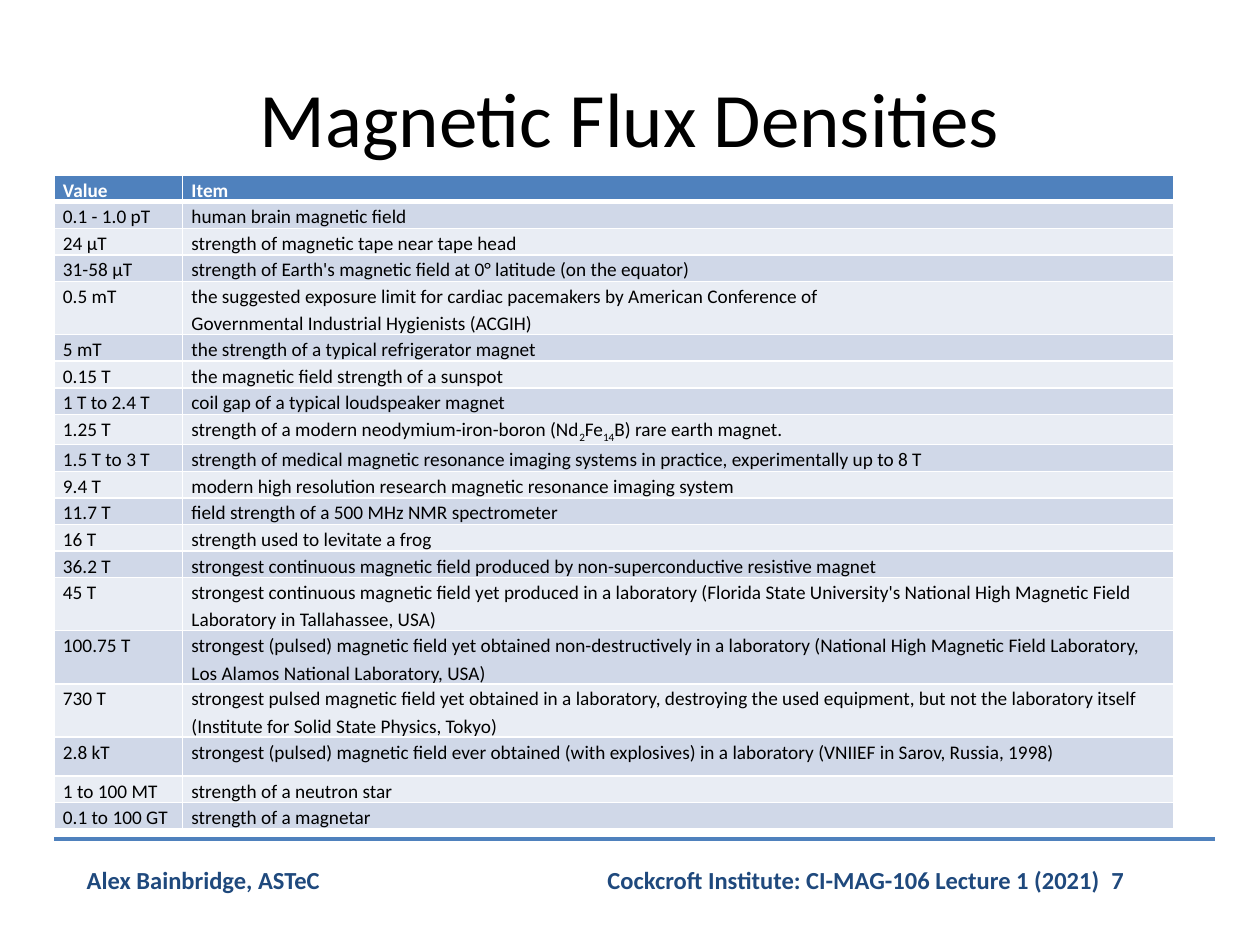
from dataclasses import dataclass

from lxml import etree
from pptx import Presentation, util as u
from pptx.dml.color import RGBColor
from pptx.enum import shapes, text
from pptx.oxml import ns


@dataclass(frozen=True)
class Theme:
    font: str = "Calibri"
    title_size: float = 44
    footer_size: float = 14
    table_size: float = 11
    black: str = "000000"
    white: str = "FFFFFF"
    navy: str = "1F497D"
    accent: str = "4F81BD"
    bands: tuple = ("D0D8E8", "E9EDF4")


THEME = Theme()
HEADER = ("Value", "Item")
# Underscores enclose subscripts; a line break starts a new paragraph.
DENSITIES = [
    ("0.1 - 1.0 pT", "human brain magnetic field"),
    ("24 µT", "strength of magnetic tape near tape head"),
    ("31-58 µT", "strength of Earth's magnetic field at 0° latitude (on the equator)"),
    ("0.5 mT", "the suggested exposure limit for cardiac pacemakers by American Conference of\n"
               "Governmental Industrial Hygienists (ACGIH)"),
    ("5 mT", "the strength of a typical refrigerator magnet"),
    ("0.15 T", "the magnetic field strength of a sunspot"),
    ("1 T to 2.4 T", "coil gap of a typical loudspeaker magnet"),
    ("1.25 T", "strength of a modern neodymium-iron-boron (Nd_2_Fe_14_B) rare earth magnet."),
    ("1.5 T to 3 T", "strength of medical magnetic resonance imaging systems in practice, "
                     "experimentally up to 8 T"),
    ("9.4 T", "modern high resolution research magnetic resonance imaging system"),
    ("11.7 T", "field strength of a 500 MHz NMR spectrometer"),
    ("16 T", "strength used to levitate a frog"),
    ("36.2 T", "strongest continuous magnetic field produced by non-superconductive "
               "resistive magnet"),
    ("45 T", "strongest continuous magnetic field yet produced in a laboratory (Florida State "
             "University's National High Magnetic Field Laboratory in Tallahassee, USA)"),
    ("100.75 T", "strongest (pulsed) magnetic field yet obtained non-destructively in a laboratory "
                 "(National High Magnetic Field Laboratory, Los Alamos National Laboratory, USA)"),
    ("730 T", "strongest pulsed magnetic field yet obtained in a laboratory, destroying the used "
              "equipment, but not the laboratory itself (Institute for Solid State Physics, Tokyo)"),
    ("2.8 kT", "strongest (pulsed) magnetic field ever obtained (with explosives) in a laboratory "
               "(VNIIEF in Sarov, Russia, 1998)"),
    ("1 to 100 MT", "strength of a neutron star"),
    ("0.1 to 100 GT", "strength of a magnetar"),
]
COLUMN_WIDTHS = (1.02, 7.87)
ROW_HEIGHT = 0.2
SPECIAL_HEIGHTS = {0: 0.12, 4: 0.31, 14: 0.31, 15: 0.42, 16: 0.31, 17: 0.31}


def apply_format(target, values):
    for name, value in values.items():
        setattr(target, name, value)


def write_text(frame, wording, size, color, bold=False, paragraph_format=None):
    """Fill a frame, one paragraph per line, with _marked_ parts as subscripts."""
    for index, line in enumerate(wording.split("\n")):
        paragraph = frame.add_paragraph() if index else frame.paragraphs[0]
        apply_format(paragraph, paragraph_format or {})
        for position, part in enumerate(line.split("_")):
            run = paragraph.add_run()
            run.text = part
            apply_format(run.font, {"name": THEME.font, "size": u.Pt(size), "bold": bold})
            run.font.color.rgb = RGBColor.from_string(color)
            if position % 2:
                run.font._element.set("baseline", "-25000")


def add_label(slide, box, wording, size, color, bold=False,
              align=text.PP_ALIGN.LEFT, anchor=text.MSO_ANCHOR.TOP):
    frame = slide.shapes.add_textbox(*map(u.Inches, box)).text_frame
    apply_format(frame, {"word_wrap": True, "vertical_anchor": anchor})
    write_text(frame, wording, size, color, bold, {"alignment": align})


def add_rule(slide, left, right, y):
    rule = slide.shapes.add_connector(
        shapes.MSO_CONNECTOR.STRAIGHT, *map(u.Inches, (left, y, right, y)))
    rule.line.color.rgb = RGBColor.from_string(THEME.accent)
    rule.line.width = u.Pt(2)
    etree.SubElement(rule._element.spPr, ns.qn("a:effectLst"))


def set_borders(cell, widths):
    """Draw white borders; widths maps each side (L, R, T, B) to points."""
    properties = cell._tc.get_or_add_tcPr()
    for side, width in widths.items():
        border = etree.SubElement(properties, ns.qn(f"a:ln{side}"), w=str(u.Pt(width)))
        fill = etree.SubElement(border, ns.qn("a:solidFill"))
        etree.SubElement(fill, ns.qn("a:srgbClr"), val=THEME.white)


def format_cell(cell, wording, row):
    is_header = row == 0
    apply_format(cell, {
        "margin_left": u.Inches(0.07), "margin_right": u.Inches(0.07),
        "margin_top": 0, "margin_bottom": 0,
    })
    set_borders(cell, {"L": 1, "R": 1, "T": 3 if row == 1 else 1, "B": 3 if is_header else 1})
    fill_color = THEME.accent if is_header else THEME.bands[(row - 1) % 2]
    cell.fill.solid()
    cell.fill.fore_color.rgb = RGBColor.from_string(fill_color)
    write_text(cell.text_frame, wording, THEME.table_size,
               THEME.white if is_header else THEME.black, is_header, {"line_spacing": 1.15})


def add_density_table(slide, left, top):
    records = [HEADER, *DENSITIES]
    heights = [SPECIAL_HEIGHTS.get(row, ROW_HEIGHT) for row in range(len(records))]
    table = slide.shapes.add_table(
        len(records), len(HEADER),
        *map(u.Inches, (left, top, sum(COLUMN_WIDTHS), sum(heights)))).table
    for column, width in zip(table.columns, COLUMN_WIDTHS):
        column.width = u.Inches(width)
    for row, (record, height) in enumerate(zip(records, heights)):
        table.rows[row].height = u.Inches(height)
        for column, wording in enumerate(record):
            format_cell(table.cell(row, column), wording, row)


def main():
    deck = Presentation()
    apply_format(deck, {"slide_width": u.Inches(10), "slide_height": u.Inches(7.5)})
    slide = deck.slides.add_slide(deck.slide_layouts[6])
    add_label(slide, (0.59, 6.82, 3.86, 0.34), "Alex Bainbridge, ASTeC",
              THEME.footer_size, THEME.navy, bold=True)
    add_rule(slide, 0.43, 9.64, 6.66)
    add_label(slide, (4.1, 6.82, 5.54, 0.34),
              "Cockcroft Institute: CI-MAG-106 Lecture 1 (2021)\t7",
              THEME.footer_size, THEME.navy, bold=True, align=text.PP_ALIGN.CENTER)
    add_label(slide, (0.5, 0.3, 9, 1.25), "Magnetic Flux Densities",
              THEME.title_size, THEME.black,
              align=text.PP_ALIGN.CENTER, anchor=text.MSO_ANCHOR.MIDDLE)
    add_density_table(slide, 0.43, 1.39)
    deck.save("out.pptx")


if __name__ == "__main__":
    main()
